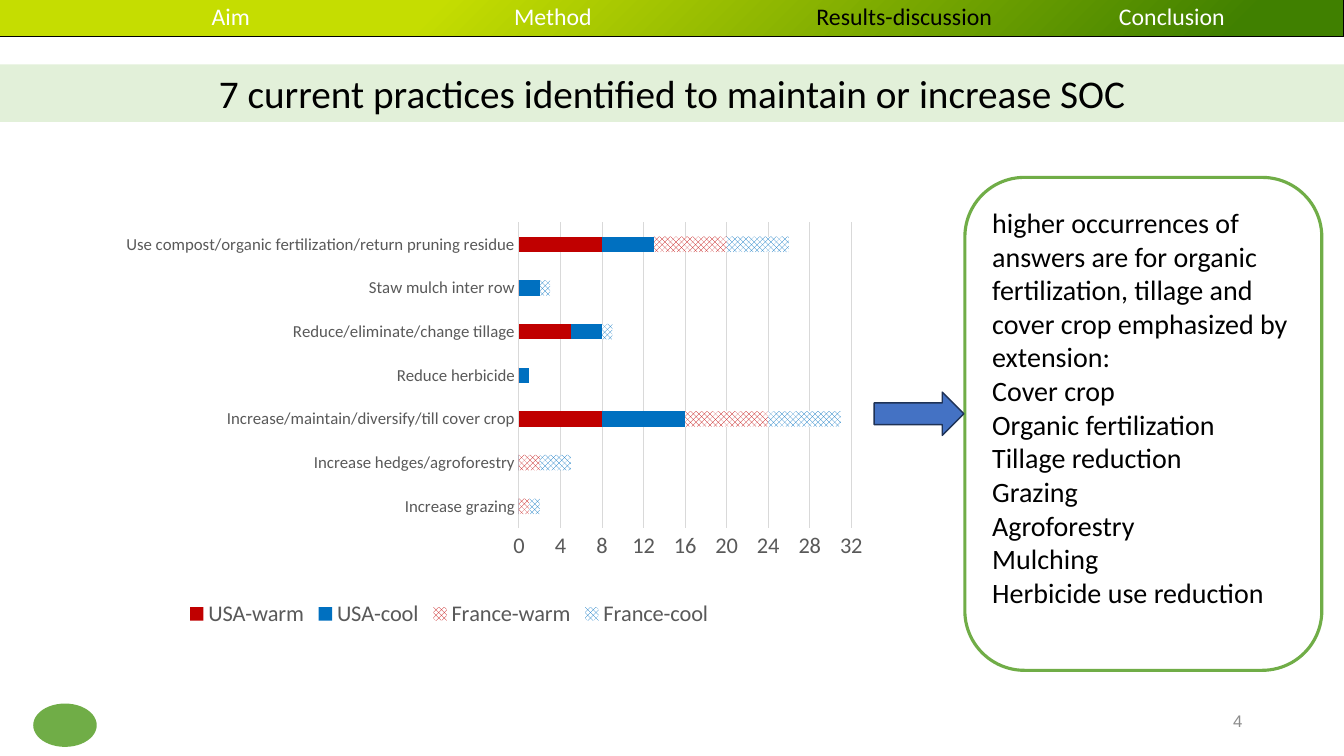
from lxml import etree
from pptx import Presentation
from pptx.chart.data import CategoryChartData
from pptx.dml.color import RGBColor
from pptx.enum.chart import XL_CHART_TYPE as CHART, XL_LEGEND_POSITION as LEGEND, XL_TICK_MARK as TICK
from pptx.enum.dml import MSO_PATTERN as PATTERN
from pptx.enum.shapes import MSO_SHAPE as SHAPE
from pptx.enum.text import MSO_ANCHOR as ANCHOR, PP_ALIGN as ALIGN
from pptx.oxml import parse_xml
from pptx.oxml.ns import nsdecls, qn
from pptx.util import Emu, Inches, Pt

FONT = "Calibri"
BLACK, WHITE, GREY, PALE_GREY = "000000", "FFFFFF", "595959", "D9D9D9"
RED, BLUE, GREEN = "C00000", "0070C0", "70AD47"

SECTIONS = ["Aim", "Method", "Results-discussion", "Conclusion"]
CURRENT_SECTION = "Results-discussion"
TITLE = "7 current practices identified to maintain or increase SOC"
FINDINGS = [
    "higher occurrences of answers are for organic fertilization, tillage and "
    "cover crop emphasized by extension:",
    "Cover crop",
    "Organic fertilization",
    "Tillage reduction",
    "Grazing",
    "Agroforestry",
    "Mulching",
    "Herbicide use reduction",
]
PRACTICES = [
    "Increase grazing",
    "Increase hedges/agroforestry",
    "Increase/maintain/diversify/till cover crop",
    "Reduce herbicide",
    "Reduce/eliminate/change tillage",
    "Staw mulch inter row",
    "Use compost/organic fertilization/return pruning residue",
]
# name, answers per practice, colour, checkered
ANSWERS = [
    ("USA-warm", (0, 0, 8, 0, 5, 0, 8), RED, False),
    ("USA-cool", (0, 0, 8, 1, 3, 2, 5), BLUE, False),
    ("France-warm", (1, 2, 8, 0, 0, 0, 7), RED, True),
    ("France-cool", (1, 3, 7, 0, 1, 1, 6), BLUE, True),
]


def rgb(color):
    return RGBColor.from_string(color)


def set_font(font, size, color, name=FONT):
    font.size, font.name = Pt(size), name
    font.color.rgb = rgb(color)


def add_run(p, text, size=20, color=BLACK, font=FONT):
    r = p.add_run()
    r.text = text
    set_font(r.font, size, color, font)


def set_line(line, color, width):
    line.color.rgb = rgb(color)
    line.width = Pt(width)


def set_corner_gradient(sp, stops):
    """Fill with a circular gradient centred on the bottom right corner."""
    gs = "".join(f'<a:gs pos="{pos * 1000}"><a:srgbClr val="{color}"/></a:gs>' for pos, color in stops)
    grad = parse_xml(
        f'<a:gradFill {nsdecls("a")} rotWithShape="1"><a:gsLst>{gs}</a:gsLst>'
        '<a:path path="circle"><a:fillToRect l="100000" t="100000"/></a:path></a:gradFill>')
    sp.fill.background()
    no_fill = sp._element.spPr.find(qn("a:noFill"))
    no_fill.getparent().replace(no_fill, grad)


def set_tab_stops(p, stops):
    tabs = etree.SubElement(p._p.get_or_add_pPr(), qn("a:tabLst"))
    for stop in stops:
        etree.SubElement(tabs, qn("a:tab"), pos=str(Inches(stop)), algn="l")


def set_plot_area(chart, x, y, w, h):
    """Place the inner plot area by fractions of the chart size."""
    plot_area = chart._chartSpace.chart.plotArea
    for old in plot_area.findall(qn("c:layout")):
        plot_area.remove(old)
    parts = [("layoutTarget", "inner"), ("xMode", "edge"), ("yMode", "edge"),
             ("x", x), ("y", y), ("w", w), ("h", h)]
    inner = "".join(f'<c:{tag} val="{val}"/>' for tag, val in parts)
    plot_area.insert(0, parse_xml(
        f'<c:layout {nsdecls("c")}><c:manualLayout>{inner}</c:manualLayout></c:layout>'))


class SlideBuilder:
    def __init__(self, slide):
        self.slide = slide

    def shape(self, kind, x, y, w, h, fill=None, line=None, width=1):
        sp = self.slide.shapes.add_shape(kind, Inches(x), Inches(y), Inches(w), Inches(h))
        sp.shadow.inherit = False
        if fill:
            sp.fill.solid()
            sp.fill.fore_color.rgb = rgb(fill)
        else:
            sp.fill.background()
        if line:
            set_line(sp.line, line, width)
        else:
            sp.line.fill.background()
        return sp

    def text(self, sp, paragraphs, align=ALIGN.LEFT, anchor=ANCHOR.TOP, **font):
        tf = sp.text_frame
        tf.word_wrap = True
        tf.vertical_anchor = anchor
        for i, text in enumerate(paragraphs):
            p = tf.add_paragraph() if i else tf.paragraphs[0]
            p.alignment = align
            add_run(p, text, **font)
        return tf

    def section_bar(self):
        sp = self.shape(SHAPE.RECTANGLE, 0, -0.03, 13.33, 0.39, line=BLACK, width=0.75)
        set_corner_gradient(sp, [(8, "408000"), (68, "C5DD01")])
        tf = self.text(sp, [])
        p = tf.paragraphs[0]
        p.alignment = ALIGN.LEFT
        set_tab_stops(p, [2 + 3 * i for i in range(len(SECTIONS))])
        for section in SECTIONS:
            add_run(p, "\t" + section, 17, BLACK if section == CURRENT_SECTION else WHITE)

    def page_number(self, number):
        sp = self.slide.shapes.add_textbox(Inches(9.42), Inches(6.95), Inches(3), Inches(0.4))
        self.text(sp, [number], ALIGN.RIGHT, ANCHOR.MIDDLE, size=12, color="8C8C8C", font="Arial")

    def answers_chart(self, x, y, w, h):
        data = CategoryChartData()
        data.categories = PRACTICES
        for name, values, *_ in ANSWERS:
            data.add_series(name, values)
        chart = self.slide.shapes.add_chart(
            CHART.BAR_STACKED, Inches(x), Inches(y), Inches(w), Inches(h), data).chart
        set_font(chart.font, 10, BLACK)
        chart.has_title = False
        chart.has_legend = True
        chart.legend.position = LEGEND.BOTTOM
        chart.legend.include_in_layout = False
        set_font(chart.legend.font, 16, GREY)

        plot = chart.plots[0]
        plot.gap_width, plot.overlap, plot.vary_by_categories = 182, 100, False
        for series, (_, _, color, checkered) in zip(plot.series, ANSWERS):
            fill = series.format.fill
            if checkered:
                fill.patterned()
                fill.pattern = PATTERN.LARGE_CHECKER_BOARD
                fill.back_color.rgb = rgb(WHITE)
            else:
                fill.solid()
            fill.fore_color.rgb = rgb(color)

        cat, val = chart.category_axis, chart.value_axis
        for axis, size in ((cat, 12), (val, 16)):
            axis.major_tick_mark = axis.minor_tick_mark = TICK.NONE
            set_font(axis.tick_labels.font, size, GREY)
        set_line(cat.format.line, PALE_GREY, 0.75)
        val.format.line.fill.background()
        val.minimum_scale, val.maximum_scale, val.major_unit = 0, 32, 4
        val.has_major_gridlines = True
        set_line(val.major_gridlines.format.line, PALE_GREY, 0.75)
        set_plot_area(chart, 0.582, 0.064, 0.39, 0.699)


def main():
    prs = Presentation()
    prs.slide_width, prs.slide_height = Inches(13.33), Inches(7.5)
    s = SlideBuilder(prs.slides.add_slide(prs.slide_layouts[6]))

    s.shape(SHAPE.OVAL, 0.33, 6.98, 0.63, 0.43, fill=GREEN)
    s.page_number("4")
    s.section_bar()
    title = s.shape(SHAPE.RECTANGLE, 0, 0.64, 13.33, 0.57, fill="E2F0D9")
    s.text(title, [TITLE], ALIGN.CENTER, size=28)
    panel = s.shape(SHAPE.ROUNDED_RECTANGLE, 9.57, 1.76, 3.54, 4.89, line=GREEN, width=2.25)
    tf = s.text(panel, FINDINGS, anchor=ANCHOR.MIDDLE)
    tf.margin_bottom = Emu(tf.margin_bottom + Inches(0.33))
    s.shape(SHAPE.RIGHT_ARROW, 8.67, 3.89, 0.89, 0.43, fill="4472C4", line="1E3256")
    s.answers_chart(0.23, 1.93, 8.45, 4.34)

    prs.save("out.pptx")


if __name__ == "__main__":
    main()
